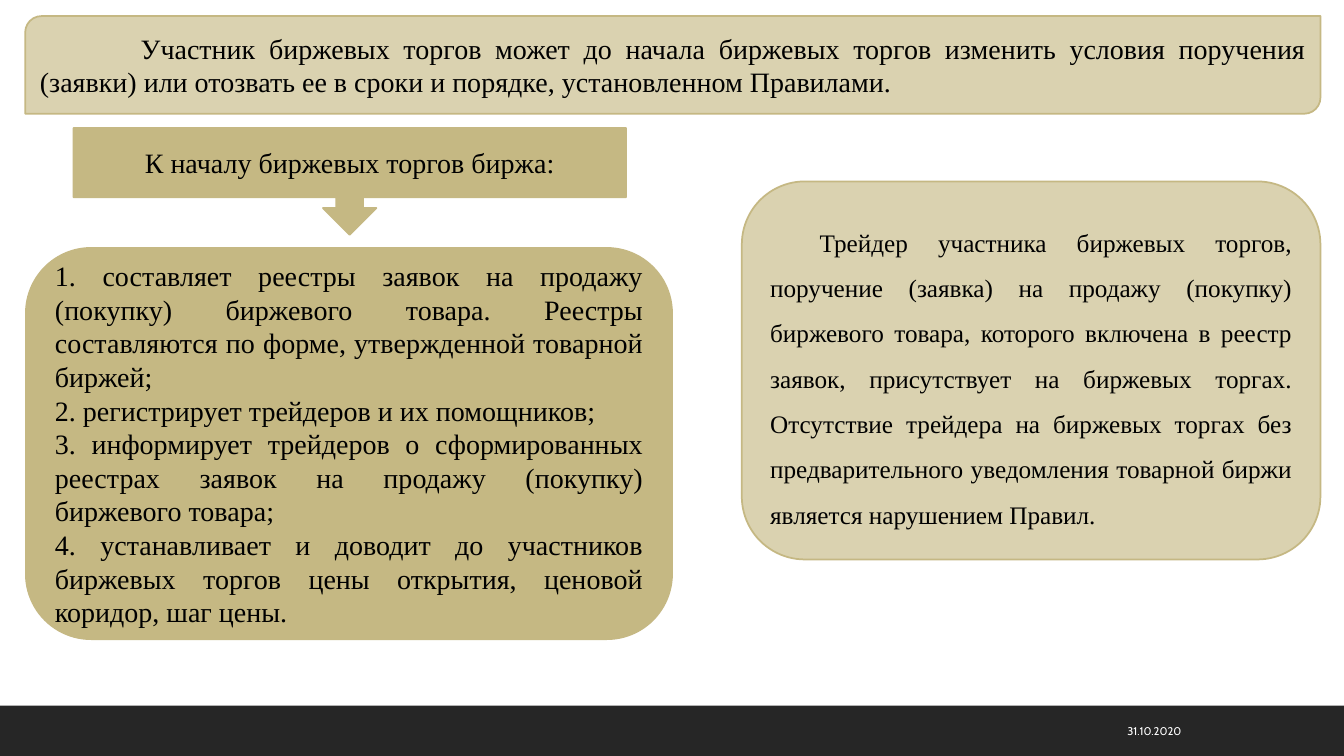
from dataclasses import dataclass

from pptx import Presentation
from pptx.dml.color import RGBColor
from pptx.enum.shapes import MSO_SHAPE as Kind
from pptx.enum.text import MSO_ANCHOR as Anchor, PP_ALIGN as Align
from pptx.shapes.autoshape import Shape
from pptx.slide import Slide
from pptx.util import Pt

SAND, GOLD, DARK = "DAD2B0", "C5B883", "262626"
BLACK, WHITE = "000000", "FFFFFF"
SERIF, SANS = "Times New Roman", "Cabin"


@dataclass
class Panel:
    kind: Kind
    box: tuple[float, float, float, float]
    fill: str
    text: list[str]
    size: float = 20
    align: Align = Align.JUSTIFY
    indent: float = 0
    space: float = 1


# Panels from back to front; boxes are left, top, width, height in points
PANELS = [
    Panel(Kind.ROUND_2_DIAG_RECTANGLE, (18, 11.5, 925.2, 69.8), SAND, [
        "Участник биржевых торгов может до начала биржевых торгов изменить "
        "условия поручения (заявки) или отозвать ее в сроки и порядке, "
        "установленном Правилами.",
    ], indent=72),
    Panel(Kind.ROUNDED_RECTANGLE, (18.5, 177.1, 461.5, 279.4), GOLD, [
        "1. составляет реестры заявок на продажу (покупку) биржевого товара. "
        "Реестры составляются по форме, утвержденной товарной биржей;",
        "2. регистрирует трейдеров и их помощников;",
        "3. информирует трейдеров о сформированных реестрах заявок на продажу "
        "(покупку) биржевого товара;",
        "4. устанавливает и доводит до участников биржевых торгов цены "
        "открытия, ценовой коридор, шаг цены.",
    ]),
    Panel(Kind.DOWN_ARROW_CALLOUT, (52.5, 91.4, 394.6, 76.3), GOLD, [
        "К началу биржевых торгов биржа:",
    ], align=Align.CENTER),
    Panel(Kind.ROUNDED_RECTANGLE, (529.9, 129.6, 413.3, 270), SAND, [
        "Трейдер участника биржевых торгов, поручение (заявка) на продажу "
        "(покупку) биржевого товара, которого включена в реестр заявок, "
        "присутствует на биржевых торгах. Отсутствие трейдера на биржевых "
        "торгах без предварительного уведомления товарной биржи является "
        "нарушением Правил.",
    ], size=18, indent=35.4, space=1.5),
]


def color(code: str) -> RGBColor:
    return RGBColor.from_string(code)


def write(shape: Shape, text: list[str], *, size: float, align: Align,
          font: str = SERIF, ink: str = BLACK, indent: float = 0,
          space: float = 1) -> None:
    frame = shape.text_frame
    frame.word_wrap = True
    frame.vertical_anchor = Anchor.MIDDLE
    for i, line in enumerate(text):
        para = frame.add_paragraph() if i else frame.paragraphs[0]
        para.alignment = align
        para.line_spacing = space
        if indent:
            para._p.get_or_add_pPr().set("indent", str(Pt(indent)))
        run = para.add_run()
        run.text = line
        run.font.size = Pt(size)
        run.font.name = font
        run.font.color.rgb = color(ink)


def block(slide: Slide, kind: Kind, box: tuple[float, float, float, float],
          fill: str, edge: str | None = None) -> Shape:
    shape = slide.shapes.add_shape(kind, *map(Pt, box))
    shape.shadow.inherit = False
    shape.fill.solid()
    shape.fill.fore_color.rgb = color(fill)
    if edge:
        shape.line.color.rgb = color(edge)
        shape.line.width = Pt(1.25)
    else:
        shape.line.fill.background()
    return shape


def draw(slide: Slide, panel: Panel) -> None:
    shape = block(slide, panel.kind, panel.box, panel.fill, GOLD)
    write(shape, panel.text, size=panel.size, align=panel.align,
          indent=panel.indent, space=panel.space)


def main() -> None:
    deck = Presentation()
    deck.slide_width, deck.slide_height = Pt(960), Pt(540)
    slide = deck.slides.add_slide(deck.slide_layouts[6])

    # Footer band with the date
    block(slide, Kind.RECTANGLE, (0, 504, 960, 36), DARK)
    date = slide.shapes.add_textbox(*map(Pt, (647.3, 507.6, 203.8, 28.8)))
    write(date, ["31.10.2020"], size=8, align=Align.RIGHT, font=SANS, ink=WHITE)

    # Text panels
    for panel in PANELS:
        draw(slide, panel)

    deck.save("out.pptx")


if __name__ == "__main__":
    main()
